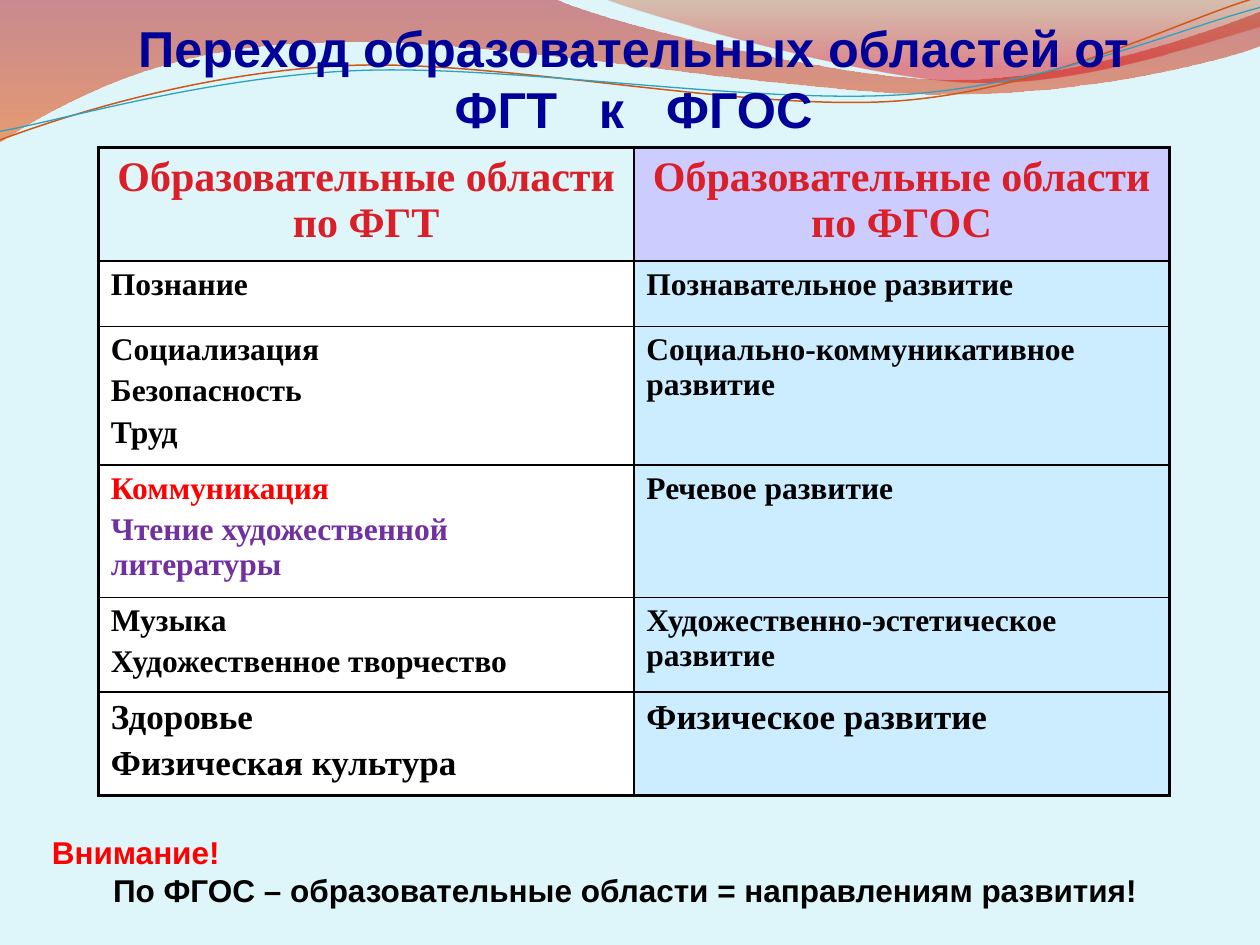
from dataclasses import dataclass

from lxml import etree
from pptx import Presentation
from pptx.dml.color import RGBColor
from pptx.enum.text import MSO_ANCHOR, PP_ALIGN
from pptx.oxml.ns import qn
from pptx.util import Pt

CENTER, LEFT = PP_ALIGN.CENTER, PP_ALIGN.LEFT
TOP, BOTTOM = MSO_ANCHOR.TOP, MSO_ANCHOR.BOTTOM


@dataclass(frozen=True)
class Theme:
    background: str = "DEF5FA"
    title: str = "000099"
    heading: str = "DA1F28"
    text: str = "000000"
    alert: str = "FF0000"
    reading: str = "7030A0"
    old_fill: str = "FFFFFF"
    new_heading_fill: str = "CCCCFF"
    new_fill: str = "CCECFF"
    border: str = "000000"
    sans: str = "Arial"
    serif: str = "Times New Roman"
    title_size: float = 28.8
    heading_size: float = 24
    large_size: float = 20
    body_size: float = 18
    outer_border: float = 2.25
    inner_border: float = 1


THEME = Theme()

# Outlines in points: a pair is a straight step, six numbers a Bezier curve.
# Gradient stops: position, colour, opacity in percent.
WAVES = [
    ((0, -0.7),
     [(316.8, -0.7), (342.7, 12.2, 478, 45.4, 545.8, 45.4),
      (614.2, 45.4, 689.8, 18.7, 720, 6.5), (720.7, 25.9),
      (707.8, 31.7, 626.4, 54.7, 537.1, 54),
      (447.8, 54, 275, 20.2, 185, 24.5), (92.9, 25.2, 33.1, 59.8, -0.7, 81.4)],
     [(0, "AF0911", 45), (1, "EE5300", 55)]),
    ((344.9, -0.7),
     [(366.5, 7.9, 491, 44.6, 553.7, 46.8),
      (616.3, 49.7, 691.9, 23, 720, 15.1), (720, 0)],
     [(0, "C24400", 30), (0.8, "DC000B", 45)]),
]
STRANDS = [
    ((-1.4, 63),
     [(33.8, 51.7, 114.1, 29.4, 199.8, 29.9), (284.9, 30.3, 425.8, 67.3, 512.4, 64.9),
      (599, 62.4, 676.5, 25.7, 720.2, 15.5)], "CF5818", 0.85),
    ((-1.1, 58),
     [(32.9, 53.8, 118.3, 32.5, 204.1, 33), (290.6, 33.4, 428.9, 63.1, 515.5, 61.4),
      (601.3, 59.6, 678.5, 30.1, 721.4, 21.3)], "2DA2BF", 0.75),
]
STRAND_ROTATION = -2.7

# Row height, areas before, area after; a pair gives an area its own colour.
AREAS = [
    (37.5, ["Познание"], "Познавательное развитие"),
    (79, ["Социализация", "Безопасность", "Труд"],
     "Социально-коммуникативное развитие"),
    (70.5, [("Коммуникация", THEME.alert),
            ("Чтение художественной литературы", THEME.reading)],
     "Речевое развитие"),
    (54, ["Музыка", "Художественное творчество"],
     "Художественно-эстетическое развитие"),
    (55.5, ["Здоровье", "Физическая культура"], "Физическое развитие"),
]
HEADING_HEIGHT = 60


def rgb(color):
    return RGBColor.from_string(color)


def add_outline(slide, start, steps, close):
    """Draw straight steps, then bend those that have control points."""
    builder = slide.shapes.build_freeform(Pt(start[0]), Pt(start[1]))
    builder.add_line_segments([(Pt(s[-2]), Pt(s[-1])) for s in steps], close=close)
    shape = builder.convert_to_shape()
    shape.shadow.inherit = False
    segments = list(shape.element.iter(qn("a:lnTo")))
    for segment, step in zip(segments, steps):
        if len(step) == 2:
            continue
        curve = etree.Element(qn("a:cubicBezTo"))
        for x, y in zip(step[::2], step[1::2]):
            etree.SubElement(curve, qn("a:pt"), x=str(Pt(x) - shape.left),
                             y=str(Pt(y) - shape.top))
        segment.getparent().replace(segment, curve)
    return shape


def add_wave(slide, start, steps, stops):
    wave = add_outline(slide, start, steps, close=True)
    wave.line.fill.background()
    wave.fill.gradient()
    wave.fill.gradient_angle = 270
    for stop, (position, color, _) in zip(wave.fill.gradient_stops, stops):
        stop.position = position
        stop.color.rgb = rgb(color)
    colors = wave.element.spPr.find(qn("a:gradFill")).iter(qn("a:srgbClr"))
    for color_element, (_, _, opacity) in zip(colors, stops):
        etree.SubElement(color_element, qn("a:alpha"), val=str(opacity * 1000))


def add_strand(slide, start, steps, color, width):
    strand = add_outline(slide, start, steps, close=False)
    strand.rotation = STRAND_ROTATION
    strand.fill.background()
    strand.line.color.rgb = rgb(color)
    strand.line.width = Pt(width)


def set_space_before(paragraph, percent):
    """Set paragraph spacing relative to the type size."""
    spacing = etree.Element(qn("a:spcBef"))
    etree.SubElement(spacing, qn("a:spcPct"), val=str(percent * 1000))
    paragraph._p.get_or_add_pPr().insert(0, spacing)


def write_paragraphs(frame, lines, font, size, align=LEFT, space_before=0):
    """Fill a text frame with bold (text, colour) lines."""
    frame.word_wrap = True
    for i, (text, color) in enumerate(lines):
        paragraph = frame.add_paragraph() if i else frame.paragraphs[0]
        paragraph.text = text
        paragraph.alignment = align
        set_space_before(paragraph, space_before)
        paragraph.font.name = font
        paragraph.font.size = Pt(size)
        paragraph.font.bold = True
        paragraph.font.color.rgb = rgb(color)


def add_text(slide, box, lines, size, align=LEFT, anchor=TOP):
    frame = slide.shapes.add_textbox(*map(Pt, box)).text_frame
    frame.vertical_anchor = anchor
    write_paragraphs(frame, lines, THEME.sans, size, align)
    return frame


def set_borders(cell, outer_sides):
    properties = cell._tc.get_or_add_tcPr()
    for side in "LRTB":
        width = THEME.outer_border if side in outer_sides else THEME.inner_border
        line = etree.SubElement(properties, qn(f"a:ln{side}"), w=str(Pt(width)))
        fill = etree.SubElement(line, qn("a:solidFill"))
        etree.SubElement(fill, qn("a:srgbClr"), val=THEME.border)


def fill_cell(cell, lines, size, fill, outer_sides, align=LEFT):
    write_paragraphs(cell.text_frame, lines, THEME.serif, size, align, space_before=20)
    set_borders(cell, outer_sides)
    if fill:
        cell.fill.solid()
        cell.fill.fore_color.rgb = rgb(fill)
    else:
        cell.fill.background()


def add_areas_table(slide):
    heights = [HEADING_HEIGHT] + [height for height, _, _ in AREAS]
    table = slide.shapes.add_table(len(heights), 2, Pt(56.2), Pt(84.2),
                                   Pt(612), Pt(sum(heights))).table
    table.first_row = table.horz_banding = False
    for row, height in zip(table.rows, heights):
        row.height = Pt(height)

    headings = [("ФГТ", None, "LT"), ("ФГОС", THEME.new_heading_fill, "RT")]
    for column, (standard, fill, sides) in enumerate(headings):
        fill_cell(table.cell(0, column),
                  [(f"Образовательные области по {standard}", THEME.heading)],
                  THEME.heading_size, fill, sides, CENTER)

    for row, (_, before, after) in enumerate(AREAS, start=1):
        last = row == len(AREAS)
        size = THEME.large_size if last else THEME.body_size
        bottom = "B" if last else ""
        old = [(area, THEME.text) if isinstance(area, str) else area for area in before]
        fill_cell(table.cell(row, 0), old, size, THEME.old_fill, "L" + bottom)
        fill_cell(table.cell(row, 1), [(after, THEME.text)], size,
                  THEME.new_fill, "R" + bottom)


def main():
    presentation = Presentation()
    presentation.slide_width, presentation.slide_height = Pt(720), Pt(540)
    slide = presentation.slides.add_slide(presentation.slide_layouts[6])
    slide.background.fill.solid()
    slide.background.fill.fore_color.rgb = rgb(THEME.background)

    for wave in WAVES:
        add_wave(slide, *wave)
    for strand in STRANDS:
        add_strand(slide, *strand)

    title = add_text(slide, (56.2, 11.5, 612, 67.5),
                     [("Переход образовательных областей от ФГТ   к   ФГОС", THEME.title)],
                     THEME.title_size, CENTER, BOTTOM)
    title.margin_left = title.margin_right = title.margin_bottom = 0

    add_areas_table(slide)

    note = add_text(slide, (22.5, 472.5, 675, 51),
                    [("Внимание!", THEME.alert),
                     ("По ФГОС – образовательные области = направлениям развития!",
                      THEME.text)],
                    THEME.body_size)
    note.paragraphs[1]._p.get_or_add_pPr().set("indent", str(Pt(35)))

    presentation.save("out.pptx")


if __name__ == "__main__":
    main()
